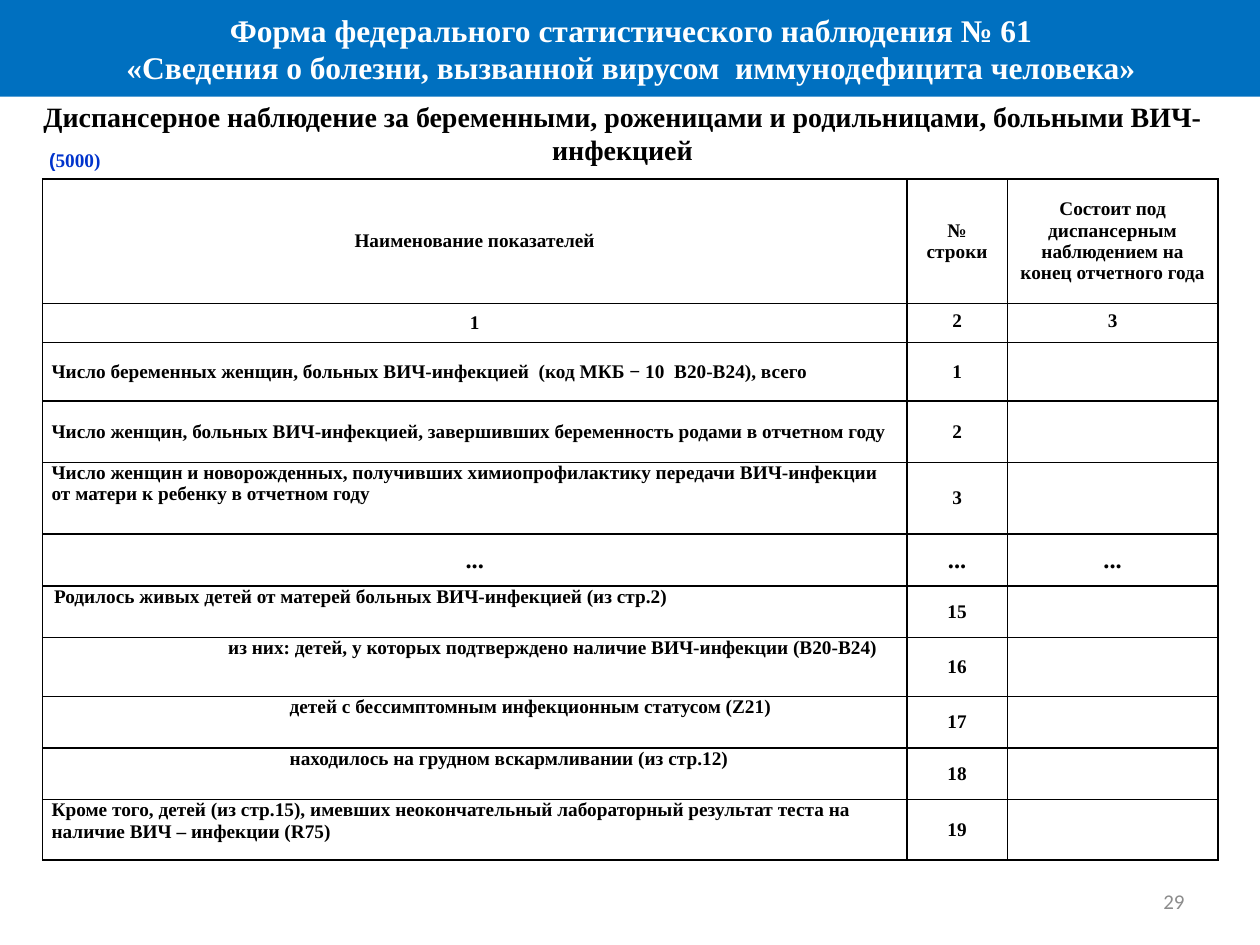
from lxml import etree
from pptx import Presentation, util as u
from pptx.dml.color import RGBColor
from pptx.enum import shapes, text
from pptx.oxml.ns import qn

SERIF = "Times New Roman"
LEFT, CENTER, RIGHT = text.PP_ALIGN.LEFT, text.PP_ALIGN.CENTER, text.PP_ALIGN.RIGHT
TOP, MIDDLE = text.MSO_ANCHOR.TOP, text.MSO_ANCHOR.MIDDLE

TITLE = ("Форма федерального статистического наблюдения № 61\n"
         "«Сведения о болезни, вызванной вирусом  иммунодефицита человека»")
HEADING = ("Диспансерное наблюдение за беременными, роженицами и родильницами, "
           "больными ВИЧ-инфекцией")
PAGE = "29"

COLUMN_WIDTHS = [17.42, 2.03, 4.24]
# row height, the three texts, format of the first cell, format of the whole row
ROWS = [
    (2.51, ("Наименование показателей", "№\nстроки",
            "Состоит под диспансерным наблюдением на конец отчетного года"), {}, {}),
    (0.79, ("1", "2", "3"), {"anchor": MIDDLE}, {"anchor": TOP, "margin": 0.13}),
    (1.17, ("Число беременных женщин, больных ВИЧ-инфекцией  (код МКБ − 10  В20-В24), всего",
            "1", ""), {"align": LEFT}, {}),
    (1.24, ("Число женщин, больных ВИЧ-инфекцией, завершивших беременность родами в отчетном году",
            "2", ""), {"align": LEFT}, {}),
    (1.45, ("Число женщин и новорожденных, получивших химиопрофилактику передачи ВИЧ-инфекции "
            "от матери к ребенку в отчетном году", "3", ""), {"align": LEFT, "anchor": TOP}, {}),
    (1.04, ("...", "...", "..."), {}, {"size": 14, "margin": 0.13}),
    (1.04, ("Родилось живых детей от матерей больных ВИЧ-инфекцией (из стр.2)", "15", ""),
     {"align": LEFT, "anchor": TOP, "indent": 0.05}, {}),
    (1.19, ("из них: детей, у которых подтверждено наличие ВИЧ-инфекции (В20-В24)", "16", ""),
     {"align": LEFT, "anchor": TOP, "indent": 3.56}, {}),
    (1.04, ("детей с бессимптомным инфекционным статусом (Z21)", "17", ""),
     {"align": LEFT, "anchor": TOP, "indent": 4.8}, {}),
    (1.04, ("находилось на грудном вскармливании (из стр.12)", "18", ""),
     {"align": LEFT, "anchor": TOP, "indent": 4.8}, {}),
    (1.22, ("Кроме того, детей (из стр.15), имевших неокончательный лабораторный результат "
            "теста на наличие ВИЧ – инфекции (R75)", "19", ""),
     {"align": LEFT, "anchor": TOP}, {}),
]
CELL = {"align": CENTER, "anchor": MIDDLE, "size": 11, "margin": 0, "indent": 0}


def color(hex_value):
    return RGBColor.from_string(hex_value)


def style_font(font, size, hex_value="000000", name=SERIF, bold=True):
    for key, value in {"size": u.Pt(size), "name": name, "bold": bold}.items():
        setattr(font, key, value)
    font.color.rgb = color(hex_value)


def write(frame, words, align, size, *font_format):
    frame.text = words
    for paragraph in frame.paragraphs:
        paragraph.alignment = align
        style_font(paragraph.font, size, *font_format)


def add_box(slide, left, top, width, height, anchor):
    frame = slide.shapes.add_textbox(*map(u.Cm, (left, top, width, height))).text_frame
    frame.word_wrap = True
    frame.vertical_anchor = anchor
    return frame


def add_borders(cell):
    properties = cell._tc.get_or_add_tcPr()
    for side in ("a:lnL", "a:lnR", "a:lnT", "a:lnB"):
        line = etree.SubElement(properties, qn(side), w=str(u.Pt(1)))
        fill = etree.SubElement(line, qn("a:solidFill"))
        etree.SubElement(fill, qn("a:srgbClr"), val="000000")


def fill_cell(cell, words, look):
    add_borders(cell)
    cell.fill.solid()
    cell.fill.fore_color.rgb = color("FFFFFF")
    write(cell.text_frame, words, look["align"], look["size"])
    if look["indent"]:
        first_line = cell.text_frame.paragraphs[0]._p.get_or_add_pPr()
        first_line.set("indent", str(u.Cm(look["indent"])))
    layout = {"vertical_anchor": look["anchor"],
              "margin_left": u.Cm(0.18), "margin_right": u.Cm(0.18),
              "margin_top": u.Cm(look["margin"]), "margin_bottom": u.Cm(look["margin"])}
    for key, value in layout.items():
        setattr(cell, key, value)


def add_indicators(slide):
    heights = [row[0] for row in ROWS]
    table = slide.shapes.add_table(
        len(ROWS), len(COLUMN_WIDTHS), u.Cm(0.86), u.Cm(3.61),
        u.Cm(sum(COLUMN_WIDTHS)), u.Cm(sum(heights))).table
    for column, width in zip(table.columns, COLUMN_WIDTHS):
        column.width = u.Cm(width)
    for row, (height, words, first_look, row_look) in zip(table.rows, ROWS):
        row.height = u.Cm(height)
        for index, (cell, cell_words) in enumerate(zip(row.cells, words)):
            look = CELL | row_look | (first_look if index == 0 else {})
            fill_cell(cell, cell_words, look)


def main():
    deck = Presentation()
    deck.slide_width, deck.slide_height = u.Cm(25.4), u.Cm(19.05)
    slide = deck.slides.add_slide(deck.slide_layouts[6])

    banner = slide.shapes.add_shape(
        shapes.MSO_SHAPE.RECTANGLE, 0, 0, u.Cm(25.45), u.Cm(1.95))
    banner.shadow.inherit = False
    banner.fill.solid()
    banner.fill.fore_color.rgb = color("0070C0")
    banner.line.fill.background()
    banner.text_frame.vertical_anchor = MIDDLE
    write(banner.text_frame, TITLE, CENTER, 18, "FFFFFF")

    add_indicators(slide)
    write(add_box(slide, 0, 1.88, 25.1, 1.63, TOP), HEADING, CENTER, 16)

    table_code = add_box(slide, 0.74, 2.84, 5.59, 0.76, MIDDLE).paragraphs[0]
    for words, name in (("(", "Arial"), ("5000)", SERIF)):
        run = table_code.add_run()
        run.text = words
        style_font(run.font, 11, "0033CC", name)

    write(add_box(slide, 18.21, 17.65, 5.92, 1.02, MIDDLE),
          PAGE, RIGHT, 12, "8C8C8C", "Calibri", False)
    deck.save("out.pptx")


if __name__ == "__main__":
    main()
